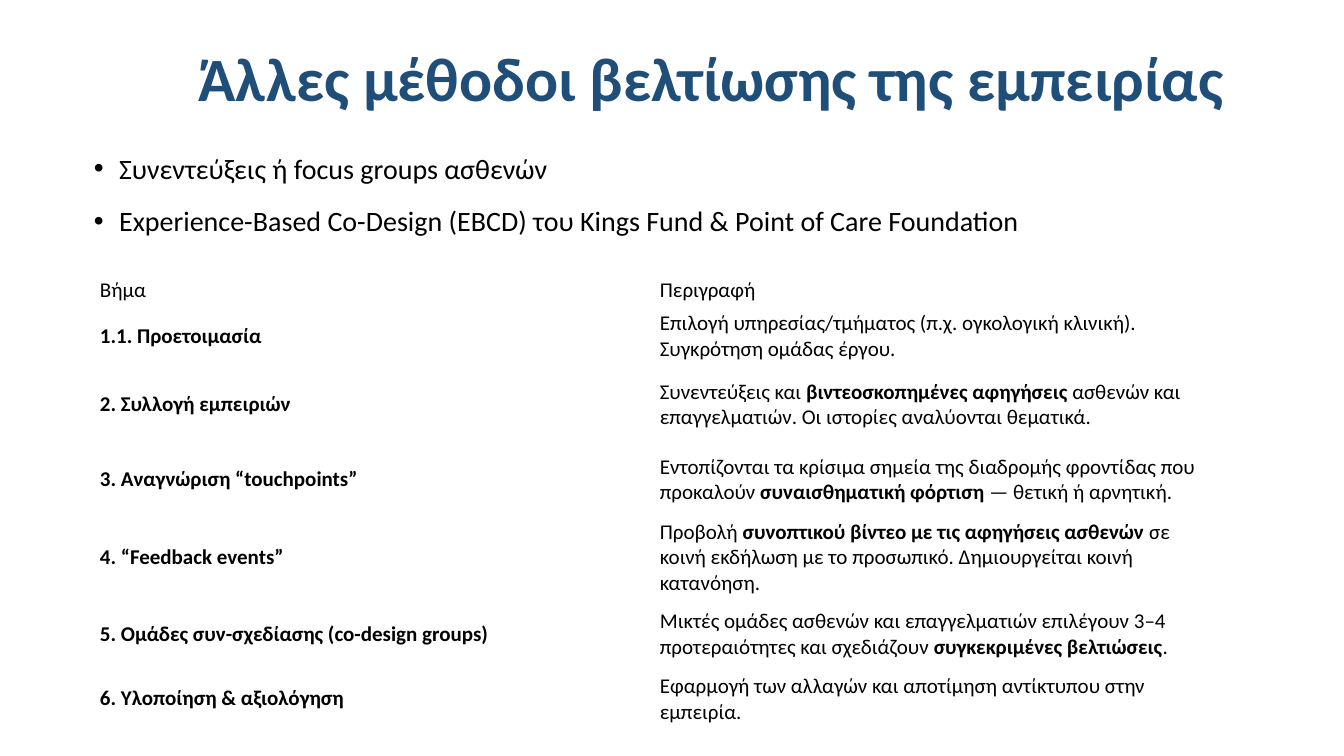
from lxml.etree import SubElement
from pptx import Presentation
from pptx.dml.color import RGBColor
from pptx.enum.text import MSO_ANCHOR, PP_ALIGN
from pptx.oxml.ns import qn
from pptx.util import Inches, Pt

COLUMNS, ROWS = 12, 12
ROW_HEIGHTS = [0.43, 0.85, 1.26, 1.12, 1.12, 1.12, 0.75]
STEPS = [
    ("Βήμα", "Περιγραφή"),
    ("**1. Προετοιμασία**",
     "Επιλογή υπηρεσίας/τμήματος (π.χ. ογκολογική κλινική). Συγκρότηση ομάδας έργου."),
    ("**2. Συλλογή εμπειριών**",
     "Συνεντεύξεις και **βιντεοσκοπημένες αφηγήσεις** ασθενών και επαγγελματιών. "
     "Οι ιστορίες αναλύονται θεματικά."),
    ("**3. Αναγνώριση “touchpoints”**",
     "Εντοπίζονται τα κρίσιμα σημεία της διαδρομής φροντίδας που προκαλούν "
     "**συναισθηματική φόρτιση** — θετική ή αρνητική."),
    ("**4. “Feedback events”**",
     "Προβολή **συνοπτικού βίντεο με τις αφηγήσεις ασθενών** σε κοινή εκδήλωση "
     "με το προσωπικό. Δημιουργείται κοινή κατανόηση."),
    ("**5. Ομάδες συν-σχεδίασης (co-design groups)**",
     "Μικτές ομάδες ασθενών και επαγγελματιών επιλέγουν 3–4 προτεραιότητες "
     "και σχεδιάζουν **συγκεκριμένες βελτιώσεις**."),
    ("**6. Υλοποίηση & αξιολόγηση**",
     "Εφαρμογή των αλλαγών και αποτίμηση αντίκτυπου στην εμπειρία."),
]


def color(hex_string):
    return RGBColor.from_string(hex_string)


class SlideBuilder:
    font_name = "Calibri"
    title_color = "1F4E79"
    text_color = "000000"

    def __init__(self, deck):
        self.slide = deck.slides.add_slide(deck.slide_layouts[6])
        self.column = deck.slide_width / COLUMNS
        self.row = deck.slide_height / ROWS

    def place(self, left, top, width, height):
        """Turn grid columns and rows into slide lengths."""
        return (round(left * self.column), round(top * self.row),
                round(width * self.column), round(height * self.row))

    def add_spans(self, para, text, size, hex_string):
        """Fill a paragraph; parts between double asterisks are bold."""
        for index, part in enumerate(text.split("**")):
            if part:
                span = para.add_run()
                span.text = part
                span.font.name = self.font_name
                span.font.size = Pt(size)
                span.font.bold = index % 2 == 1
                span.font.color.rgb = color(hex_string)

    def text_frame(self, *area):
        frame = self.slide.shapes.add_textbox(*self.place(*area)).text_frame
        frame.word_wrap = True
        return frame

    def title(self, text, *area):
        frame = self.text_frame(*area)
        frame.vertical_anchor = MSO_ANCHOR.MIDDLE
        para = frame.paragraphs[0]
        para.alignment = PP_ALIGN.CENTER
        para.line_spacing = 0.9
        self.add_spans(para, f"**{text}**", 44, self.title_color)

    def bullets(self, items, *area):
        frame = self.text_frame(*area)
        for index, item in enumerate(items):
            para = frame.add_paragraph() if index else frame.paragraphs[0]
            if index:
                para.line_spacing = 0.9
                para.space_before = Pt(10)
            else:
                para.space_after = Pt(6)
            properties = para._p.get_or_add_pPr()
            properties.set("marL", str(Inches(0.25)))
            properties.set("indent", str(Inches(-0.25)))
            SubElement(properties, qn("a:buFont"), typeface="Arial")
            SubElement(properties, qn("a:buChar"), char="•")
            self.add_spans(para, item, 20, self.text_color)

    def table(self, entries, row_heights, left, top, width):
        area = self.place(left, top, width, sum(row_heights))
        table = self.slide.shapes.add_table(len(entries), len(entries[0]), *area).table
        table.first_row = table.horz_banding = False
        for row, height, texts in zip(table.rows, row_heights, entries):
            row.height = round(height * self.row)
            for cell, text in zip(row.cells, texts):
                cell.fill.background()
                cell.vertical_anchor = MSO_ANCHOR.MIDDLE
                cell.margin_left = cell.margin_right = Inches(0.08)
                cell.margin_top = cell.margin_bottom = Inches(0.04)
                self.add_spans(cell.text_frame.paragraphs[0], text, 15, self.text_color)
        return table

    def number(self, para):
        """Give a paragraph an automatic number."""
        SubElement(para._p.get_or_add_pPr(), qn("a:buAutoNum"), type="arabicPeriod")


def main():
    deck = Presentation()
    deck.slide_width, deck.slide_height = Inches(13.33), Inches(7.5)
    builder = SlideBuilder(deck)
    builder.title("Άλλες μέθοδοι βελτίωσης της εμπειρίας", 1.18, 0.14, 10.35, 2.32)
    builder.bullets(
        ["Συνεντεύξεις ή focus groups ασθενών",
         "Experience-Based Co-Design (EBCD) του Kings Fund & Point of Care Foundation"],
        0.75, 2.32, 10.15, 1.54)
    steps = builder.table(STEPS, ROW_HEIGHTS, 0.82, 4.34, 10)
    builder.number(steps.cell(1, 0).text_frame.paragraphs[0])
    deck.save("out.pptx")


if __name__ == "__main__":
    main()
